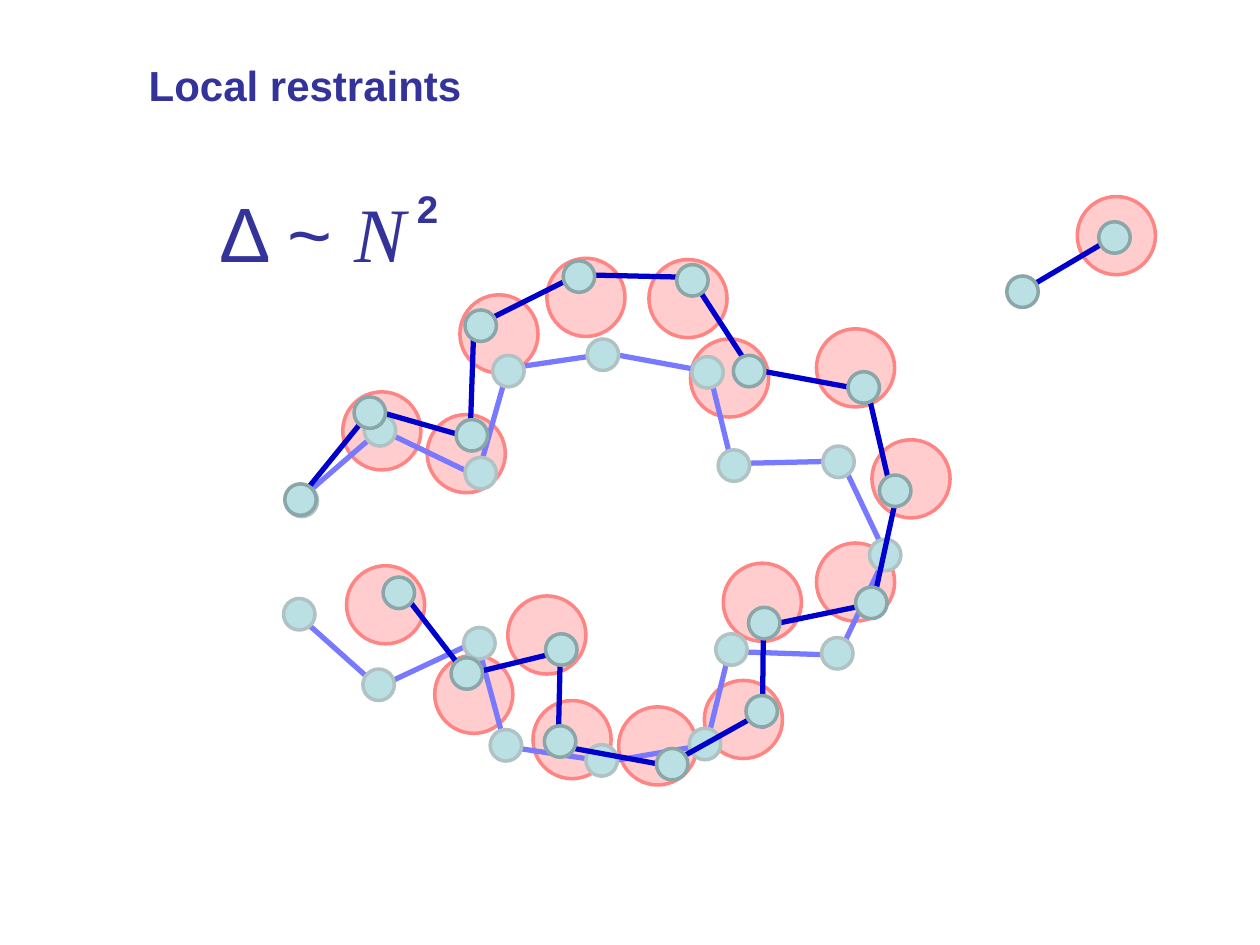
from dataclasses import dataclass
from itertools import zip_longest

from lxml import etree
from pptx import Presentation
from pptx.dml.color import RGBColor
from pptx.enum import shapes, text
from pptx.oxml import ns
from pptx.util import Inches, Pt

# Grid: 100 columns by 75 rows on a 10 x 7.5 inch page
COLUMNS, ROWS = 100, 75
WIDTH, HEIGHT = Inches(10), Inches(7.5)
ATOM_SIZE, ZONE_SIZE = 2.5, 6.2

INDIGO = RGBColor(0x33, 0x33, 0x99)
PINK = RGBColor(0xFF, 0xCD, 0xCD)
CORAL = RGBColor(0xFF, 0x85, 0x85)
AQUA = RGBColor(0xBB, 0xE0, 0xE3)
SLATE = RGBColor(0x8A, 0xA6, 0xA8)
PALE_SLATE = RGBColor(0xB0, 0xC2, 0xC4)
BLUE = RGBColor(0x00, 0x00, 0xCC)
PALE_BLUE = RGBColor(0x79, 0x79, 0xFF)

Point = tuple[float, float]
Bond = tuple[float, float, float, float]


@dataclass
class Chain:
    """Atoms (left, top) and the bonds (x1, y1, x2, y2) that leave them."""
    bond_color: RGBColor
    rim_color: RGBColor
    atoms: list[Point]
    bonds: list[Bond]


@dataclass
class Span:
    words: str
    format: dict


LEGEND_ZONES = [(85.5, 15.6)]
ZONES = [
    (27.5, 44.9), (34.5, 52), (40.3, 47.3), (42.3, 55.6), (49.1, 56.1), (55.9, 54),
    (57.4, 44.7), (64.8, 43.1), (69.2, 34.9), (64.8, 26.1), (54.8, 26.9), (51.5, 20.6),
    (43.4, 20.5), (36.5, 23.4), (33.9, 32.9), (27.2, 31.1),
]

LEGEND = Chain(BLUE, SLATE, [(79.9, 21.9), (87.2, 17.6)], [(80.8, 23.3, 88.4, 18.8)])

LOWER_START = Chain(
    PALE_BLUE, PALE_SLATE,
    [(22.5, 47.5), (28.8, 53.1), (36.8, 49.8), (38.9, 57.9),
     (46.5, 59.1), (54.7, 57.8), (56.8, 50.3), (65.2, 50.6)],
    [(23.4, 48.6, 30, 54.5), (29.7, 54.7, 37.8, 50.9), (37.8, 50.7, 40.1, 59.2),
     (39.8, 59.2, 48.5, 60.5), (47.4, 60.6, 56.1, 59.1), (56, 59.4, 58.1, 50.8),
     (57.7, 51.7, 66.5, 52), (66.4, 52.3, 70.2, 44.3)])

UPPER_START = Chain(
    PALE_BLUE, PALE_SLATE,
    [(22.7, 38.5), (28.9, 32.9), (36.9, 36.3), (39.1, 28.2), (46.6, 26.9),
     (54.9, 28.3), (57, 35.7), (65.3, 35.4), (69, 42.8)],
    [(23.5, 39.9, 30.2, 34.1), (29.8, 33.9, 37.9, 37.8), (37.9, 37.8, 40.3, 29.3),
     (39.9, 29.3, 48.7, 28), (47.5, 27.9, 56.2, 29.5), (56.2, 29.1, 58.3, 37.7),
     (57.8, 36.8, 66.7, 36.6), (66.6, 36.2, 70.4, 44.2)])

MOVED = Chain(
    BLUE, SLATE,
    [(22.6, 38.4), (28.1, 31.5), (36.2, 33.3), (36.9, 24.6), (44.7, 20.7), (53.7, 21),
     (58.2, 28.2), (67.3, 29.5), (69.8, 37.7), (67.9, 46.6), (59.4, 48.2), (59.2, 55.2),
     (52.1, 59.4), (43.2, 57.6), (43.3, 50.3), (35.8, 52.2), (30.4, 45.8)],
    [(23.5, 39.9, 29.1, 33), (29.1, 32.4, 37.5, 34.8), (37.3, 35, 37.6, 26.1),
     (37.7, 25.9, 45.7, 21.9), (45.6, 21.8, 54.4, 22), (54.7, 21.8, 59.5, 29.2),
     (59.1, 29.2, 67.8, 30.8), (68.7, 30.3, 70.7, 38.9), (71.3, 38.7, 69.4, 47.4),
     (69.3, 47.9, 60.6, 49.7), (60.6, 48.9, 60.5, 57.8), (60.9, 56.3, 53.2, 60.6),
     (53.7, 60.9, 45, 59.3), (44.3, 59.3, 44.5, 50.4), (45, 51.6, 36.4, 53.7),
     (37.2, 53.8, 31.8, 46.8)])


def x(columns: float) -> int:
    return round(WIDTH * columns / COLUMNS)


def y(rows: float) -> int:
    return round(HEIGHT * rows / ROWS)


def draw_circle(page, corner: Point, size: float, fill: RGBColor, rim: RGBColor) -> None:
    circle = page.shapes.add_shape(
        shapes.MSO_SHAPE.OVAL, x(corner[0]), y(corner[1]), x(size), y(size))
    circle.shadow.inherit = False
    circle.fill.solid()
    circle.fill.fore_color.rgb = fill
    circle.line.color.rgb = rim
    circle.line.width = Pt(2)


def draw_bond(page, bond: Bond, color: RGBColor) -> None:
    x1, y1, x2, y2 = bond
    line = page.shapes.add_connector(
        shapes.MSO_CONNECTOR.STRAIGHT, x(x1), y(y1), x(x2), y(y2))
    line.line.color.rgb = color
    line.line.width = Pt(3)
    etree.SubElement(line._element.spPr, ns.qn("a:effectLst"))


def draw_zones(page, corners: list[Point]) -> None:
    for corner in corners:
        draw_circle(page, corner, ZONE_SIZE, PINK, CORAL)


def draw_chain(page, chain: Chain) -> None:
    for atom, bond in zip_longest(chain.atoms, chain.bonds):
        if bond:
            draw_bond(page, bond, chain.bond_color)
        draw_circle(page, atom, ATOM_SIZE, AQUA, chain.rim_color)


def write(box, place: Bond, spans: list[Span], frame_format: dict) -> None:
    left, top, width, height = place
    box.left, box.top, box.width, box.height = x(left), y(top), x(width), y(height)
    for name, value in frame_format.items():
        setattr(box.text_frame, name, value)
    para = box.text_frame.paragraphs[0]
    para.alignment = text.PP_ALIGN.LEFT
    for span in spans:
        run = para.add_run()
        run.text = span.words
        run.font.color.rgb = INDIGO
        for name, value in span.format.items():
            setattr(run.font, name, value)


def main() -> None:
    deck = Presentation()
    deck.slide_width, deck.slide_height = WIDTH, HEIGHT
    page = deck.slides.add_slide(deck.slide_layouts[5])

    # Title
    write(page.shapes.title, (10.8, 4.2, 51.7, 5),
          [Span("Local restraints", {"name": "Arial", "size": Pt(24), "bold": True})],
          {"vertical_anchor": text.MSO_ANCHOR.TOP, "word_wrap": True,
           "auto_size": text.MSO_AUTO_SIZE.SHAPE_TO_FIT_TEXT})

    # Single restrained bond
    draw_zones(page, LEGEND_ZONES)
    draw_chain(page, LEGEND)

    # Restraint zones, the starting chain in two halves, the moved chain
    draw_zones(page, ZONES)
    for chain in (LOWER_START, UPPER_START, MOVED):
        draw_chain(page, chain)

    # Formula with its exponent
    formula = [Span("Δ ~ ", {"name": "Arial", "size": Pt(44)}),
               Span("N", {"name": "Times New Roman", "size": Pt(44), "italic": True})]
    exponent = [Span("2", {"name": "Arial", "size": Pt(22), "bold": True})]
    for place, spans in (((16.4, 14.2, 17.3, 8.4), formula),
                         ((32.1, 14.2, 3.7, 4.7), exponent)):
        write(page.shapes.add_textbox(0, 0, 0, 0), place, spans,
              {"word_wrap": False, "auto_size": text.MSO_AUTO_SIZE.SHAPE_TO_FIT_TEXT})

    deck.save("out.pptx")


if __name__ == "__main__":
    main()
